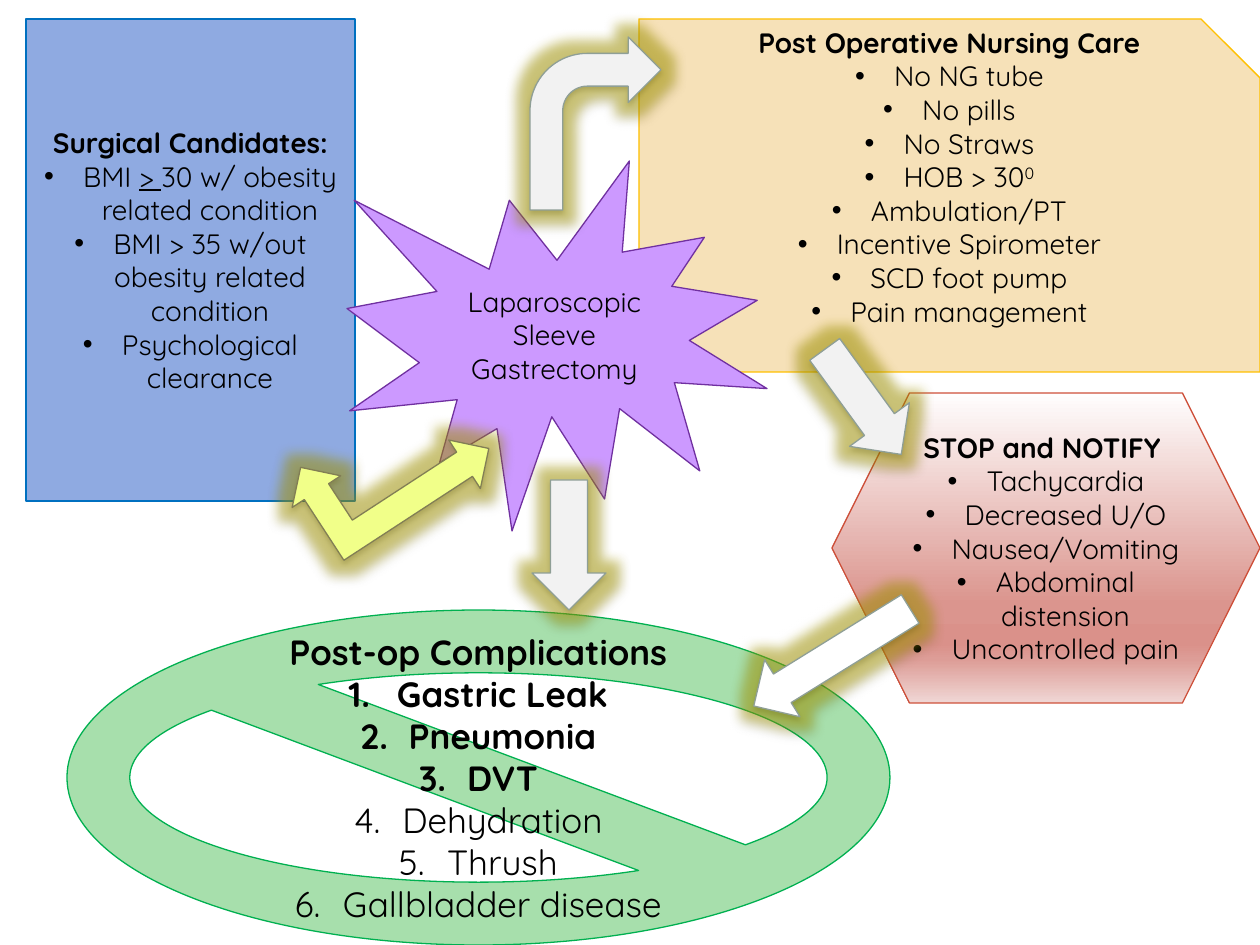
from lxml import etree
from pptx import Presentation
from pptx.dml.color import RGBColor
from pptx.enum.shapes import MSO_SHAPE
from pptx.enum.text import MSO_ANCHOR, PP_ALIGN
from pptx.oxml.ns import qn
from pptx.util import Pt

PX = 914400 // 126
FONT = "Quicksand"
CENTER, MIDDLE = PP_ALIGN.CENTER, MSO_ANCHOR.MIDDLE
RECT, SNIP = MSO_SHAPE.RECTANGLE, MSO_SHAPE.SNIP_2_DIAG_RECTANGLE
HEXAGON, BURST, NO = MSO_SHAPE.HEXAGON, MSO_SHAPE.EXPLOSION1, MSO_SHAPE.NO_SYMBOL
RIGHT, BENT, LEFT_UP = MSO_SHAPE.RIGHT_ARROW, MSO_SHAPE.BENT_ARROW, MSO_SHAPE.LEFT_UP_ARROW

BLACK = RGBColor(0x00, 0x00, 0x00)
WHITE = RGBColor(0xFF, 0xFF, 0xFF)
BLUE, BLUE_LINE = RGBColor(0x8F, 0xAA, 0xE1), RGBColor(0x00, 0x70, 0xC0)
SAND, GOLD = RGBColor(0xF6, 0xE1, 0xB8), RGBColor(0xFF, 0xC0, 0x00)
ROSE, RED = RGBColor(0xDB, 0x95, 0x8E), RGBColor(0xCE, 0x50, 0x3A)
LILAC, PURPLE = RGBColor(0xCC, 0x99, 0xFF), RGBColor(0x70, 0x30, 0xA0)
MINT, GREEN = RGBColor(0xA7, 0xDF, 0xAC), RGBColor(0x00, 0xB0, 0x50)
YELLOW, OLIVE = RGBColor(0xF1, 0xFF, 0x89), RGBColor(0x82, 0x7E, 0x55)
PALE, GREY = RGBColor(0xF2, 0xF2, 0xF2), RGBColor(0x8F, 0x9F, 0x96)
GLOW = RGBColor(0xB8, 0xA8, 0x00)
ROSE_STOPS = [(0, "FFFEFE"), (68, "DB958E"), (81, "DA918A"), (86, "DD9D97"), (100, "F0D7D5")]

prs = Presentation()
prs.slide_width, prs.slide_height = 1260 * PX, 945 * PX
slide = prs.slides.add_slide(prs.slide_layouts[6])


def add_shape(kind, box, fill, line):
    s = slide.shapes.add_shape(kind, *(v * PX for v in box))
    s.shadow.inherit = False
    s.fill.solid()
    s.fill.fore_color.rgb = fill
    s.line.color.rgb = line
    s.line.width = Pt(0.75)
    return s


def add_effect(parent, tag, color, alpha, **attrs):
    effect = etree.SubElement(parent, qn(tag), {k: str(v) for k, v in attrs.items()})
    clr = etree.SubElement(effect, qn("a:srgbClr"), val=str(color))
    etree.SubElement(clr, qn("a:alpha"), val=str(alpha * 1000))


# Panels: kind, box, fill, line, size, heading, list items (each a list of runs), bold items
# A run is text, or text with its style
panels = [
    (RECT, (26, 19, 329, 482), BLUE, BLUE_LINE, 16, "Surgical Candidates:",
     [["BMI ", ("> ", "underline"), "30 w/ obesity related condition"],
      ["BMI > 35 w/out obesity related condition"], ["Psychological clearance"]], 0),
    (SNIP, (639, 19, 621, 353), SAND, GOLD, 16, "Post Operative Nursing Care",
     [["No NG tube"], ["No pills"], ["No Straws"], ["HOB > 30", ("0", "super")],
      ["Ambulation/PT"], ["Incentive Spirometer"], ["SCD foot pump"],
      ["Pain management"]], 0),
    (HEXAGON, (832, 393, 428, 310), ROSE, RED, 16, "STOP and NOTIFY ",
     [["Tachycardia"], ["Decreased U/O"], ["Nausea/Vomiting"],
      ["Abdominal distension"], ["Uncontrolled pain"]], 0),
    (BURST, (347, 161, 420, 370), LILAC, PURPLE, 16, "Laparoscopic Sleeve Gastrectomy", [], 0),
    (NO, (67, 610, 823, 335), MINT, GREEN, 20, "Post-op Complications",
     [["Gastric Leak"], ["Pneumonia"], ["DVT"], ["Dehydration"], ["Thrush"],
      ["Gallbladder disease"]], 3),
]

# Arrows: kind, box, rotation, fill, line, flipped
arrows = [
    (LEFT_UP, (292, 420, 197, 116), 326.9, YELLOW, OLIVE, True),
    (BENT, (530, 37, 131, 173), 0, PALE, GREY, False),
    (RIGHT, (504, 508, 130, 74), 90, PALE, GREY, False),
    (RIGHT, (740, 624, 184, 67), 148.2, WHITE, GREY, False),
    (RIGHT, (798, 365, 130, 74), 53.9, PALE, GREY, False),
]

for kind, box, fill, line, size, heading, items, bold_items in panels:
    s = add_shape(kind, box, fill, line)
    tf = s.text_frame
    tf.word_wrap = True
    tf.vertical_anchor = MIDDLE
    if kind == SNIP:
        tf.margin_bottom = 44 * PX

    # Vertical gradient of the warning panel
    if kind == HEXAGON:
        s.fill.gradient()
        s.fill.gradient_angle = 270
        stops = s._element.spPr.find(qn("a:gradFill")).find(qn("a:gsLst"))
        for gs in list(stops):
            stops.remove(gs)
        for pos, color in ROSE_STOPS:
            gs = etree.SubElement(stops, qn("a:gs"), pos=str(pos * 1000))
            etree.SubElement(gs, qn("a:srgbClr"), val=color)

    # Heading, then bulleted or numbered items
    for i, runs in enumerate([[heading]] + items):
        p = tf.paragraphs[0] if i == 0 else tf.add_paragraph()
        p.alignment = CENTER
        if i > 0:
            pPr = p._p.get_or_add_pPr()
            indent = (48 if kind == NO else 39) * PX
            pPr.set("marL", str(indent))
            pPr.set("indent", str(-indent))
            if kind == NO:
                etree.SubElement(pPr, qn("a:buFont"), typeface="+mj-lt")
                etree.SubElement(pPr, qn("a:buAutoNum"), type="arabicPeriod")
            else:
                etree.SubElement(pPr, qn("a:buFont"), typeface="Arial")
                etree.SubElement(pPr, qn("a:buChar"), char="•")
        for run in runs:
            text, style = (run, None) if isinstance(run, str) else run
            r = p.add_run()
            r.text = text
            r.font.name = FONT
            r.font.size = Pt(size)
            r.font.color.rgb = BLACK
            r.font.bold = kind != BURST and i <= bold_items
            if style == "underline":
                r.font.underline = True
            elif style == "super":
                r._r.get_or_add_rPr().set("baseline", "30000")

# Glowing arrows between the panels
for kind, box, angle, fill, line, flipped in arrows:
    s = add_shape(kind, box, fill, line)
    s.rotation = angle
    spPr = s._element.spPr
    if flipped:
        spPr.find(qn("a:xfrm")).set("flipH", "1")
    effects = spPr.find(qn("a:effectLst"))
    add_effect(effects, "a:glow", GLOW, 45, rad=Pt(14))
    add_effect(effects, "a:outerShdw", BLACK, 35, blurRad=Pt(3.1), dist=Pt(1.8),
               dir=5400000, rotWithShape=0)

prs.save("out.pptx")
